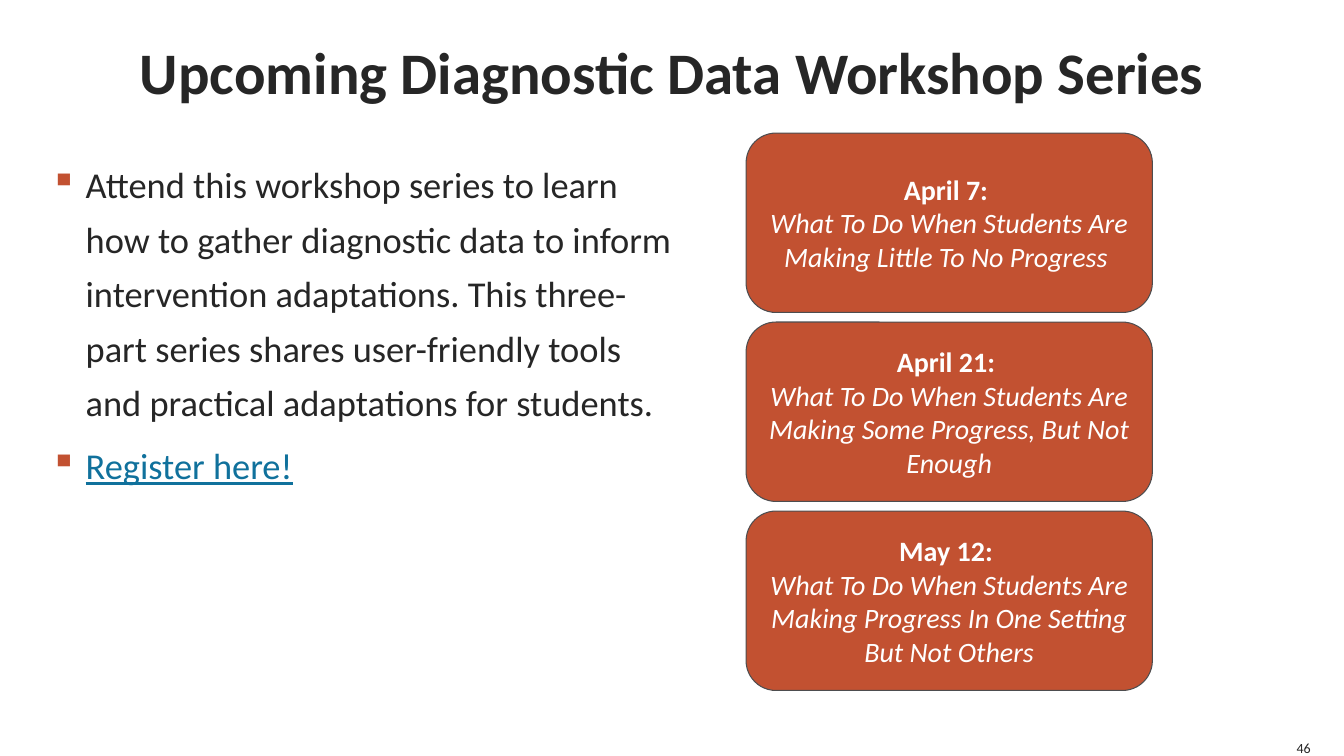
from dataclasses import dataclass

from lxml.etree import SubElement
from pptx import Presentation
from pptx.dml.color import RGBColor
from pptx.enum.shapes import MSO_SHAPE
from pptx.enum.text import MSO_ANCHOR, PP_ALIGN
from pptx.oxml.ns import qn
from pptx.util import Inches, Pt


@dataclass(frozen=True)
class Theme:
    """Hold the font, colours and type sizes of the slide."""
    font: str = "Calibri"
    ink: str = "262626"
    accent: str = "C25131"
    link: str = "10719C"
    outline: str = "4D4D4F"
    light: str = "FFFFFF"
    title_size: int = 42
    body_size: int = 26
    card_size: int = 20
    number_size: int = 10


THEME = Theme()
BULLETS = [
    ("Attend this workshop series to learn how to gather diagnostic data to inform "
     "intervention adaptations. This three-part series shares user-friendly tools "
     "and practical adaptations for students.", THEME.ink, False),
    ("Register here!", THEME.link, True),
]
WORKSHOPS = [
    ("April 7: ", "What To Do When Students Are Making Little To No Progress "),
    ("April 21: ", "What To Do When Students Are Making Some Progress, But Not Enough"),
    ("May 12: ", "What To Do When Students Are Making Progress In One Setting But Not Others"),
]
CARD_LEFT, CARD_TOP, CARD_WIDTH, CARD_HEIGHT = 7.4, 1.32, 4.03, 1.78
CARD_STEP = 1.875


def style_font(font, size, color, bold=False, italic=False, underline=False):
    """Apply the theme font with the given size, colour and emphasis."""
    font.name = THEME.font
    font.size = Pt(size)
    font.color.rgb = RGBColor.from_string(color)
    font.bold, font.italic, font.underline = bold, italic, underline


def add_box(page, left, top, width, height, anchor=MSO_ANCHOR.TOP):
    """Add a wrapping text box without margins and return its frame."""
    box = page.shapes.add_textbox(Inches(left), Inches(top), Inches(width), Inches(height))
    frame = box.text_frame
    frame.word_wrap = True
    frame.vertical_anchor = anchor
    frame.margin_left = frame.margin_top = frame.margin_right = frame.margin_bottom = 0
    return frame


def add_paragraph(frame, index, text):
    """Write text in the first paragraph or in a new one."""
    para = frame.add_paragraph() if index else frame.paragraphs[0]
    para.add_run().text = text
    return para


def add_label(page, place, text, size, align, anchor, bold=False):
    """Add a one-line label."""
    para = add_paragraph(add_box(page, *place, anchor), 0, text)
    para.alignment = align
    style_font(para.font, size, THEME.ink, bold)


def set_bullet(para):
    """Give a paragraph a hanging square bullet in the accent colour."""
    properties = para._p.get_or_add_pPr()
    properties.set("marL", str(Inches(0.35)))
    properties.set("indent", str(-Inches(0.35)))
    color = SubElement(properties, qn("a:buClr"))
    SubElement(color, qn("a:srgbClr"), val=THEME.accent)
    SubElement(properties, qn("a:buChar"), char="▪")


def add_bullets(page):
    """Add the introduction and the registration line."""
    frame = add_box(page, 0.5, 1.5, 6.17, 4.75)
    for index, (text, color, underline) in enumerate(BULLETS):
        para = add_paragraph(frame, index, text)
        set_bullet(para)
        para.line_spacing = 1.25
        if index:
            para.space_before = Pt(6)
        style_font(para.font, THEME.body_size, color, underline=underline)


def add_card(page, top, date, topic):
    """Add a rounded card with a workshop date and topic."""
    card = page.shapes.add_shape(
        MSO_SHAPE.ROUNDED_RECTANGLE, Inches(CARD_LEFT), Inches(top),
        Inches(CARD_WIDTH), Inches(CARD_HEIGHT))
    card.shadow.inherit = False
    card.fill.solid()
    card.fill.fore_color.rgb = RGBColor.from_string(THEME.accent)
    card.line.color.rgb = RGBColor.from_string(THEME.outline)
    card.line.width = Pt(0.75)
    frame = card.text_frame
    frame.word_wrap = True
    frame.vertical_anchor = MSO_ANCHOR.MIDDLE
    for index, text in enumerate((date, topic)):
        para = add_paragraph(frame, index, text)
        para.alignment = PP_ALIGN.CENTER
        style_font(para.font, THEME.card_size, THEME.light,
                   bold=index == 0, italic=index == 1)


def main():
    """Build and save the workshop slide."""
    deck = Presentation()
    deck.slide_width, deck.slide_height = Inches(13.33), Inches(7.5)
    page = deck.slides.add_slide(deck.slide_layouts[6])
    add_label(page, (0.5, 0, 12.33, 1.4), "Upcoming Diagnostic Data Workshop Series",
              THEME.title_size, PP_ALIGN.CENTER, MSO_ANCHOR.MIDDLE, bold=True)
    add_bullets(page)
    for index, (date, topic) in enumerate(WORKSHOPS):
        add_card(page, CARD_TOP + index * CARD_STEP, date, topic)
    add_label(page, (12.83, 7.33, 0.17, 0.17), "46",
              THEME.number_size, PP_ALIGN.RIGHT, MSO_ANCHOR.BOTTOM)
    deck.save("out.pptx")


if __name__ == "__main__":
    main()
